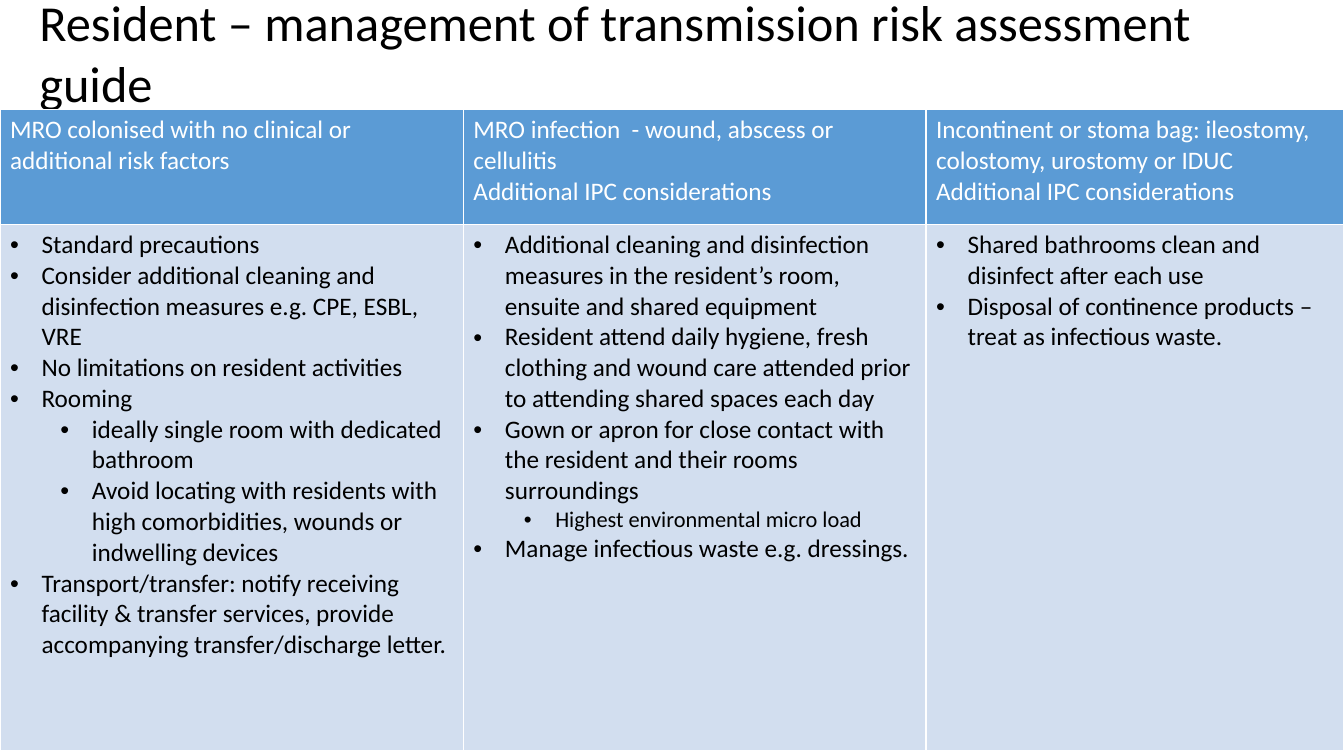
from lxml.etree import SubElement
from pptx import Presentation
from pptx.dml.color import RGBColor
from pptx.enum.text import MSO_ANCHOR
from pptx.oxml.ns import qn
from pptx.util import Pt

COLOURS = {
    "text": "000000",
    "header": "5B9BD5",
    "body": "D2DEEF",
    "white": "FFFFFF",
}
FONT = "Calibri"
TITLE = "Resident – management of transmission risk assessment guide"
COLUMN_WIDTHS = [331, 330.5, 298.5]
ROW_HEIGHTS = [82, 376]
HEADERS = [
    ["MRO colonised with no clinical or additional risk factors"],
    ["MRO infection  - wound, abscess or cellulitis",
     "Additional IPC considerations"],
    ["Incontinent or stoma bag: ileostomy, colostomy, urostomy or IDUC "
     "Additional IPC considerations"],
]
# Each measure is (indent level, text size, wording).
MEASURES = [
    [
        (0, 18, "Standard precautions"),
        (0, 18, "Consider additional cleaning and disinfection measures "
                "e.g. CPE, ESBL, VRE"),
        (0, 18, "No limitations on resident activities"),
        (0, 18, "Rooming"),
        (1, 18, "ideally single room with dedicated bathroom"),
        (1, 18, "Avoid locating with residents with high comorbidities, "
                "wounds or indwelling devices"),
        (0, 18, "Transport/transfer: notify receiving facility & transfer "
                "services, provide accompanying transfer/discharge letter."),
    ],
    [
        (0, 18, "Additional cleaning and disinfection measures in the "
                "resident’s room, ensuite and shared equipment"),
        (0, 18, "Resident attend daily hygiene, fresh clothing and wound care "
                "attended prior to attending shared spaces each day"),
        (0, 18, "Gown or apron for close contact with the resident and their "
                "rooms surroundings"),
        (1, 16, "Highest environmental micro load"),
        (0, 18, "Manage infectious waste e.g. dressings."),
    ],
    [
        (0, 18, "Shared bathrooms clean and disinfect after each use"),
        (0, 18, "Disposal of continence products – treat as infectious waste."),
    ],
]


def colour(name):
    return RGBColor.from_string(COLOURS[name])


def write_span(para, text, size, colour_name):
    span = para.add_run()
    span.text = text
    for attribute, value in {"name": FONT, "size": Pt(size)}.items():
        setattr(span.font, attribute, value)
    span.font.color.rgb = colour(colour_name)


def add_bullet(para, level):
    para.level = level
    properties = para._p.get_or_add_pPr()
    properties.set("marL", str(Pt(22.5 + 36 * level)))
    properties.set("indent", str(Pt(-22.5)))
    SubElement(properties, qn("a:buFont"), typeface="Arial")
    SubElement(properties, qn("a:buChar"), char="•")


def add_title(page):
    box = page.shapes.add_textbox(Pt(21), Pt(24), Pt(924), Pt(70))
    # The deep bottom margin lifts the two lines clear of the table.
    frame_format = {
        "word_wrap": True,
        "vertical_anchor": MSO_ANCHOR.MIDDLE,
        "margin_bottom": Pt(47.5),
    }
    for attribute, value in frame_format.items():
        setattr(box.text_frame, attribute, value)
    write_span(box.text_frame.paragraphs[0], TITLE, 36, "text")


def style_cell(cell, fill_name):
    """Give the cell thin white borders and a plain fill."""
    properties = cell._tc.get_or_add_tcPr()
    for side in ("lnL", "lnR", "lnT", "lnB"):
        line = SubElement(properties, qn(f"a:{side}"), w=str(Pt(1)))
        fill = SubElement(line, qn("a:solidFill"))
        SubElement(fill, qn("a:srgbClr"), val=COLOURS["white"])
    cell.fill.solid()
    cell.fill.fore_color.rgb = colour(fill_name)


def cell_paragraphs(cell, count):
    frame = cell.text_frame
    return [frame.paragraphs[0]] + [frame.add_paragraph() for _ in range(count - 1)]


def fill_header(cell, lines):
    style_cell(cell, "header")
    for para, text in zip(cell_paragraphs(cell, len(lines)), lines):
        write_span(para, text, 18, "white")


def fill_measures(cell, measures):
    style_cell(cell, "body")
    paragraphs = cell_paragraphs(cell, len(measures))
    for para, (level, size, text) in zip(paragraphs, measures):
        add_bullet(para, level)
        write_span(para, text, size, "text")


def add_guide_table(page):
    frame = page.shapes.add_table(
        len(ROW_HEIGHTS), len(COLUMN_WIDTHS), Pt(0), Pt(78.5),
        Pt(sum(COLUMN_WIDTHS)), Pt(sum(ROW_HEIGHTS)))
    table = frame.table
    for column, width in zip(table.columns, COLUMN_WIDTHS):
        column.width = Pt(width)
    for row, height in zip(table.rows, ROW_HEIGHTS):
        row.height = Pt(height)
    for index, (header, measures) in enumerate(zip(HEADERS, MEASURES)):
        fill_header(table.cell(0, index), header)
        fill_measures(table.cell(1, index), measures)


def main():
    deck = Presentation()
    deck.slide_width, deck.slide_height = Pt(960), Pt(540)
    page = deck.slides.add_slide(deck.slide_layouts[6])
    add_title(page)
    add_guide_table(page)
    deck.save("out.pptx")


if __name__ == "__main__":
    main()
